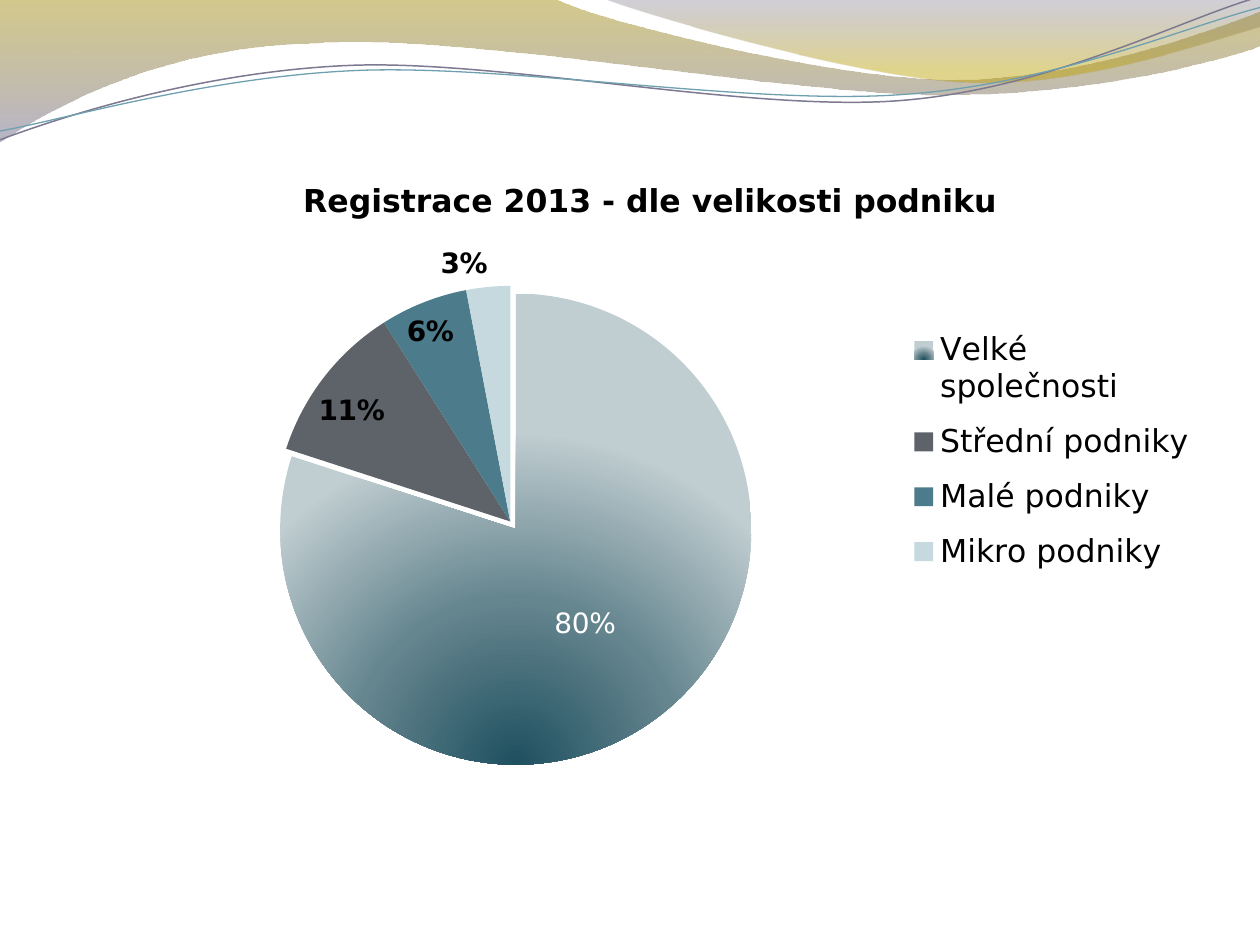
from lxml import etree
from pptx import Presentation
from pptx.chart.data import CategoryChartData
from pptx.dml.color import RGBColor
from pptx.enum.chart import XL_CHART_TYPE, XL_LABEL_POSITION, XL_LEGEND_POSITION
from pptx.oxml.ns import qn
from pptx.util import Inches, Pt

PIE = XL_CHART_TYPE.PIE
LEGEND_RIGHT = XL_LEGEND_POSITION.RIGHT
CENTER = XL_LABEL_POSITION.CENTER
BEST_FIT = XL_LABEL_POSITION.BEST_FIT

WIDTH, HEIGHT = 10, 7.5
FONT = "DejaVu Sans"
BLACK = RGBColor(0x00, 0x00, 0x00)
WHITE = RGBColor(0xFF, 0xFF, 0xFF)
OLIVE = RGBColor(0x9E, 0x87, 0x00)
MAUVE = RGBColor(0x7B, 0x76, 0x9C)
SLATE = RGBColor(0x66, 0x62, 0x7C)
GOLD = RGBColor(0xBD, 0xA1, 0x00)
VIOLET = RGBColor(0x7C, 0x79, 0x91)
SKY = RGBColor(0x6E, 0xA0, 0xB0)
GRAPHITE = RGBColor(0x5E, 0x63, 0x6A)
TEAL = RGBColor(0x4C, 0x7C, 0x8B)
ICE = RGBColor(0xC5, 0xD9, 0xDF)
DEEP_TEAL = RGBColor(0x1F, 0x50, 0x60)
MID_TEAL = RGBColor(0x66, 0x86, 0x8F)
PALE_TEAL = RGBColor(0xC0, 0xCD, 0xD1)

LEFT_WAVE = [
    (0, 0), (4.4, -0.01), (4.76, 0.17, 6.64, 0.63, 7.58, 0.63),
    (8.53, 0.63, 9.58, 0.26, 10, 0.09), (10.01, 0.36),
    (9.83, 0.44, 8.7, 0.76, 7.46, 0.75), (6.22, 0.75, 3.82, 0.28, 2.57, 0.34),
    (1.29, 0.36, 0.46, 0.83, -0.01, 1.13),
]
RIGHT_WAVE = [
    (4.79, -0.01), (5.09, 0.11, 6.82, 0.62, 7.69, 0.65),
    (8.56, 0.69, 9.61, 0.32, 10, 0.21), (10, 0),
]
VIOLET_LINE = [
    (0, 1.11), (0.48, 0.93, 1.58, 0.57, 2.77, 0.52),
    (3.95, 0.47, 5.93, 0.89, 7.13, 0.8), (8.33, 0.71, 9.38, 0.15, 9.98, -0.02),
]
SKY_LINE = [
    (0, 1.04), (0.47, 0.96, 1.64, 0.61, 2.83, 0.56),
    (4.03, 0.51, 5.97, 0.84, 7.17, 0.75), (8.36, 0.67, 9.41, 0.21, 10, 0.06),
]
SIZES = [
    ("Velké společnosti", 80, PALE_TEAL, CENTER),
    ("Střední podniky", 11, GRAPHITE, BEST_FIT),
    ("Malé podniky", 6, TEAL, BEST_FIT),
    ("Mikro podniky", 3, ICE, BEST_FIT),
]


def add_element(parent, tag, **attributes):
    return etree.SubElement(parent, qn(tag), attributes)


def set_gradient(gradient, stops, radial=False):
    for child in list(gradient):
        gradient.remove(child)
    stop_list = add_element(gradient, "a:gsLst")
    for position, color, opacity in stops:
        stop = add_element(stop_list, "a:gs", pos=str(position * 1000))
        rgb = add_element(stop, "a:srgbClr", val=str(color))
        add_element(rgb, "a:alpha", val=str(opacity * 1000))
    if radial:
        circle = add_element(gradient, "a:path", path="circle")
        add_element(circle, "a:fillToRect", l="50000", t="100000", r="50000")
    else:
        add_element(gradient, "a:lin", ang="5400000", scaled="0")


def add_outline(page, box, segments, close):
    left, top, width, height = box
    points = [(Inches(left + segment[i] * width / WIDTH),
               Inches(top + segment[i + 1] * height / HEIGHT))
              for segment in segments for i in range(0, len(segment), 2)]
    builder = page.shapes.build_freeform(*points[0], scale=1)
    builder.add_line_segments(points[1:], close=close)
    shape = builder.convert_to_shape()
    shape.shadow.inherit = False
    steps = iter(list(shape._element.iter(qn("a:lnTo"))))
    for segment in segments[1:]:
        step = next(steps)
        if len(segment) == 6:
            curve = etree.Element(qn("a:cubicBezTo"))
            step.addprevious(curve)
            for corner in (step, next(steps), next(steps)):
                curve.append(corner[0])
                corner.getparent().remove(corner)
    return shape


def add_waves(page, box):
    for segments, stops in (
        (LEFT_WAVE, [(0, OLIVE, 45), (100, MAUVE, 55)]),
        (RIGHT_WAVE, [(0, SLATE, 30), (80, GOLD, 45)]),
    ):
        wave = add_outline(page, box, segments, True)
        wave.line.fill.background()
        wave.fill.gradient()
        set_gradient(wave._element.spPr.find(qn("a:gradFill")), stops)
    for segments, color, weight in (
        (VIOLET_LINE, VIOLET, 0.85), (SKY_LINE, SKY, 0.75),
    ):
        strand = add_outline(page, box, segments, False)
        strand.fill.background()
        strand.line.color.rgb = color
        strand.line.width = Pt(weight)


def set_font(font, size, color=BLACK, bold=False):
    font.name, font.size, font.bold = FONT, Pt(size), bold
    font.color.rgb = color


def set_layout(parent, index, box, area, inner=False):
    for old in parent.findall(qn("c:layout")):
        parent.remove(old)
    layout = etree.Element(qn("c:layout"))
    manual = add_element(layout, "c:manualLayout")
    if inner:
        add_element(manual, "c:layoutTarget", val="inner")
    for mode in ("c:xMode", "c:yMode"):
        add_element(manual, mode, val="edge")
    for tag, length, whole in zip(("c:x", "c:y", "c:w", "c:h"), area, box[2:] * 2):
        add_element(manual, tag, val=str(length / whole))
    parent.insert(index, layout)


def style_slices(chart):
    plot = chart.plots[0]
    plot.vary_by_categories = True
    labels = plot.series[0].data_labels
    labels.show_percentage, labels.show_value = True, False
    set_font(labels.font, 16, bold=True)
    for index, (name, value, color, position) in enumerate(SIZES):
        point = plot.series[0].points[index]
        first = index == 0
        if first:
            point.format.fill.gradient()
        else:
            point.format.fill.solid()
            point.format.fill.fore_color.rgb = color
        set_font(point.data_label.font, 16, WHITE if first else BLACK, not first)
        point.data_label.position = position
    series = plot.series[0]._element
    for label in series.iter(qn("c:dLbl")):
        label.find(qn("c:showVal")).set("val", "0")
        label.find(qn("c:showPercent")).set("val", "1")
    large = series.find(qn("c:dPt"))
    appearance = large.find(qn("c:spPr"))
    set_gradient(appearance.find(qn("a:gradFill")),
                 [(0, DEEP_TEAL, 100), (50, MID_TEAL, 100), (100, PALE_TEAL, 100)], True)
    for old in large.findall(qn("c:explosion")):
        large.remove(old)
    appearance.addprevious(etree.Element(qn("c:explosion"), val="4"))


def add_size_chart(page, box):
    chart_data = CategoryChartData()
    chart_data.categories = [size[0] for size in SIZES]
    chart_data.add_series("Series 1", [size[1] for size in SIZES])
    chart = page.shapes.add_chart(PIE, *map(Inches, box), chart_data).chart
    set_font(chart.font, 10)
    chart.has_title = True
    title = chart.chart_title.text_frame
    title.text = "Registrace 2013 - dle velikosti podniku"
    set_font(title.paragraphs[0].runs[0].font, 18, bold=True)
    chart.has_legend = True
    chart.legend.position = LEGEND_RIGHT
    chart.legend.include_in_layout = False
    set_font(chart.legend.font, 18)
    style_slices(chart)
    space = chart._chartSpace
    plot_area = next(space.iter(qn("c:plotArea")))
    set_layout(plot_area, 0, box, (1.43, 1.04, 3.74, 3.74), True)
    set_layout(chart.legend._element, 1, box, (6.45, 1.26, 2.29, 2.18))


def main():
    deck = Presentation()
    deck.slide_width, deck.slide_height = Inches(WIDTH), Inches(HEIGHT)
    page = deck.slides.add_slide(deck.slide_layouts[6])
    add_waves(page, (0, 0, WIDTH, HEIGHT))
    add_size_chart(page, (0.75, 1.23, 8.82, 5.12))
    deck.save("out.pptx")


if __name__ == "__main__":
    main()
